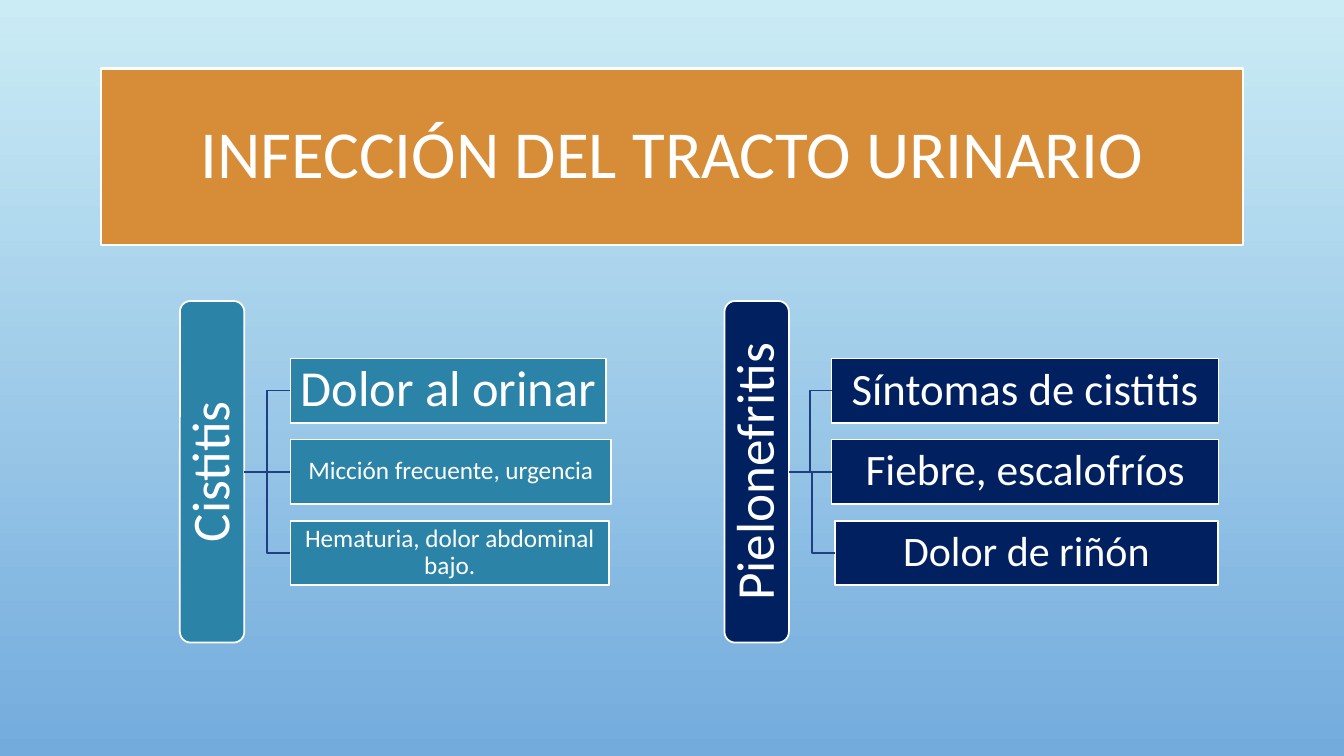
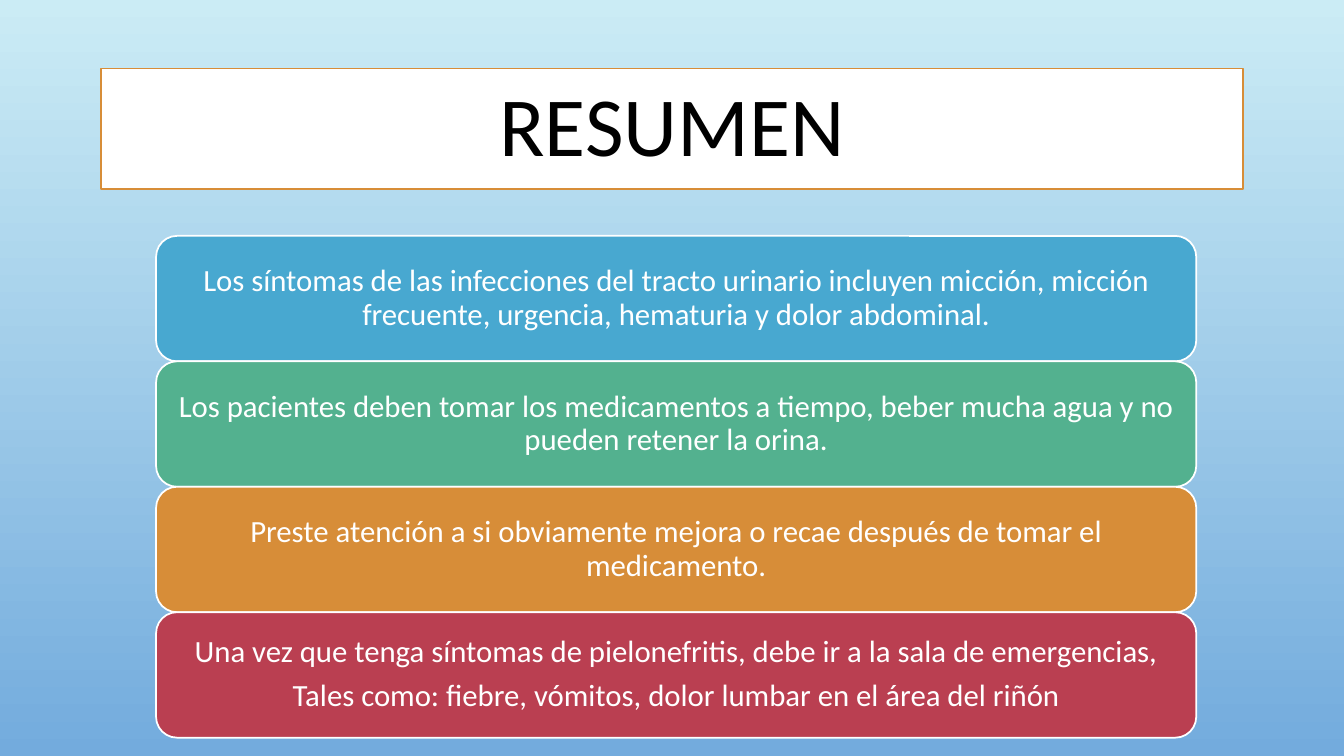
import lxml.etree
import pptx
import pptx.util
import pptx.dml.color
import pptx.enum.shapes
import pptx.enum.text
import pptx.oxml.ns

Pt = pptx.util.Pt
SHAPE = pptx.enum.shapes.MSO_SHAPE
CONNECTOR = pptx.enum.shapes.MSO_CONNECTOR
FONT = "Calibri"
COLORS = {
    name: pptx.dml.color.RGBColor.from_string(value)
    for name, value in {
        "sky_top": "CBECF5", "sky_bottom": "73ABDD", "white": "FFFFFF", "black": "000000",
        "orange": "D78D38", "teal": "2B83A7", "navy": "002060", "branch": "1F3F83",
        "blue": "48A8D0", "green": "53B18F", "red": "BA3F51",
    }.items()
}


def format_box(shape, lines, size, fill, line="white", text="white", line_width=1.25, inset=1):
    """Fill and outline a shape, and set its centred text."""
    shape.fill.solid()
    shape.fill.fore_color.rgb = COLORS[fill]
    shape.line.color.rgb = COLORS[line]
    shape.line.width = Pt(line_width)
    shape.shadow.inherit = False
    frame = shape.text_frame
    frame.text = "\n".join(lines)
    frame.word_wrap = True
    frame.vertical_anchor = pptx.enum.text.MSO_ANCHOR.MIDDLE
    frame.margin_left = frame.margin_right = Pt(inset)
    frame.margin_top = frame.margin_bottom = Pt(1)
    for index, paragraph in enumerate(frame.paragraphs):
        paragraph.alignment = pptx.enum.text.PP_ALIGN.CENTER
        paragraph.line_spacing = 0.9
        paragraph.space_before = Pt(0.35 * size if index else 0)
        paragraph.font.name = FONT
        paragraph.font.size = Pt(size)
        paragraph.font.color.rgb = COLORS[text]


def add_titled_slide(title, height, **style):
    """Add a title-only slide whose title is a wide band."""
    slide = presentation.slides.add_slide(presentation.slide_layouts[5])
    band = slide.shapes.title
    band.left, band.top, band.width, band.height = Pt(72), Pt(49), Pt(816), Pt(height)
    format_box(band, [title], inset=7, **style)
    return slide


presentation = pptx.Presentation()
presentation.slide_width = Pt(960)
presentation.slide_height = Pt(540)

# Shared background
background = presentation.slide_master.background.fill
background.gradient()
background.gradient_angle = 270
for stop, name in zip(background.gradient_stops, ("sky_top", "sky_bottom")):
    stop.color.rgb = COLORS[name]

# Slide 1: two kinds of infection with their symptoms
slide = add_titled_slide("INFECCIÓN DEL TRACTO URINARIO", 126, size=48, fill="orange", line_width=1.75)
MIDDLE, BAR_HEIGHT, THICKNESS, PITCH = 337, 244, 46, 58
# Each symptom: text, size, left, width
infections = [
    ("Cistitis", "teal", 128.5, [
        ("Dolor al orinar", 36, 207.5, 225.5),
        ("Micción frecuente, urgencia", 18, 207.5, 229),
        ("Hematuria, dolor abdominal bajo.", 18, 207.5, 227.5),
    ]),
    ("Pielonefritis", "navy", 517.5, [
        ("Síntomas de cistitis", 32, 594, 276.5),
        ("Fiebre, escalofríos", 31, 594, 276.5),
        ("Dolor de riñón", 30, 596.5, 273.5),
    ]),
]
for infection, color, bar_left, symptoms in infections:
    bar = slide.shapes.add_shape(
        SHAPE.ROUNDED_RECTANGLE, Pt(bar_left), Pt(MIDDLE - BAR_HEIGHT / 2), Pt(THICKNESS), Pt(BAR_HEIGHT))
    format_box(bar, [infection], 38, color)
    bar.element.txBody.bodyPr.set("vert", "vert270")
    for row, (symptom, size, left, width) in enumerate(symptoms, start=-1):
        top = MIDDLE + row * PITCH - THICKNESS / 2
        box = slide.shapes.add_shape(SHAPE.RECTANGLE, Pt(left), Pt(top), Pt(width), Pt(THICKNESS))
        format_box(box, [symptom], size, color)
        branch = slide.shapes.add_connector(CONNECTOR.ELBOW if row else CONNECTOR.STRAIGHT, 0, 0, 0, 0)
        branch.begin_connect(bar, 3)
        branch.end_connect(box, 1)
        branch.line.color.rgb = COLORS["branch"]
        branch.line.width = Pt(1.25)
        lxml.etree.SubElement(branch.element.spPr, pptx.oxml.ns.qn("a:effectLst"))

# Slide 2: summary
slide = add_titled_slide("RESUMEN", 86, size=60, fill="white", line="orange", text="black")
CARD_TOP, CARD_HEIGHT = 168.5, 89.6
cards = [
    ("blue", ["Los síntomas de las infecciones del tracto urinario incluyen micción, "
              "micción frecuente, urgencia, hematuria y dolor abdominal."]),
    ("green", ["Los pacientes deben tomar los medicamentos a tiempo, "
               "beber mucha agua y no pueden retener la orina."]),
    ("orange", ["Preste atención a si obviamente mejora o recae después de tomar el medicamento."]),
    ("red", ["Una vez que tenga síntomas de pielonefritis, debe ir a la sala de emergencias,",
             "Tales como: fiebre, vómitos, dolor lumbar en el área del riñón"]),
]
for row, (color, lines) in enumerate(cards):
    card = slide.shapes.add_shape(
        SHAPE.ROUNDED_RECTANGLE, Pt(111.5), Pt(CARD_TOP + row * CARD_HEIGHT), Pt(743), Pt(CARD_HEIGHT))
    format_box(card, lines, 22, color, inset=6.5)

presentation.save("out.pptx")
